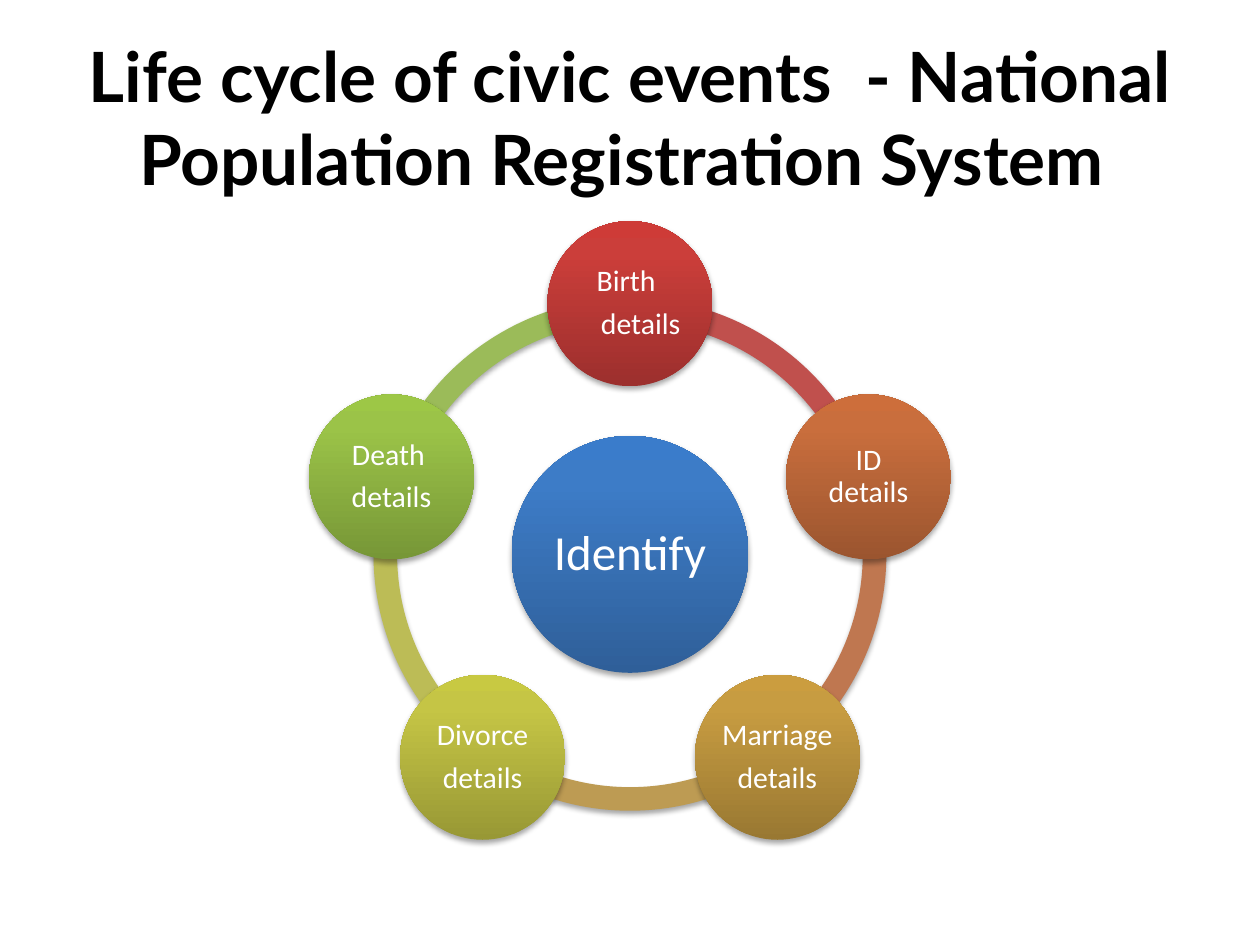
from copy import deepcopy
from dataclasses import dataclass
from math import cos, radians, sin

from lxml import etree
from pptx import Presentation
from pptx.dml.color import RGBColor
from pptx.enum.shapes import MSO_SHAPE
from pptx.enum.text import MSO_ANCHOR, PP_ALIGN
from pptx.oxml.ns import qn
from pptx.util import Inches, Pt

ARC, OVAL = MSO_SHAPE.BLOCK_ARC, MSO_SHAPE.OVAL
MIDDLE, CENTER = MSO_ANCHOR.MIDDLE, PP_ALIGN.CENTER
MID_X, MID_Y = 5, 4.4
RING, ORBIT = 4.07, 1.99
STEP = 72
STOPS = (0, 0.8, 1)


@dataclass
class Line:
    text: str
    left: float = 0
    right: float = 0


@dataclass
class Disc:
    lines: list[Line]
    shades: tuple[str, str, str]
    arc: str = ""
    size: float = 1.31
    font: float = 17
    inset: float = 0.02


HUB = Disc([Line("Identify")], ("2F5F99", "3D7CC7", "3A7CCB"),
           size=1.88, font=28, inset=0.04)

# Clockwise from the top; each arc leads to the next event
EVENTS = [
    Disc([Line("Birth", right=0.06), Line("details", left=0.17)],
         ("9C2F2D", "CB3E3A", "CE3B37"), "C0504D"),
    Disc([Line("ID details")], ("9B552F", "C96E3D", "CD6E3B"), "BF7750"),
    Disc([Line("Marriage"), Line("details")],
         ("997832", "C79C41", "CB9D3F"), "BD9B53"),
    Disc([Line("Divorce"), Line("details")],
         ("989835", "C5C545", "C8C942"), "BCBC56"),
    Disc([Line("Death", right=0.05), Line("details")],
         ("779737", "9BC348", "9DC746"), "9BBB59"),
]


def color(code: str) -> RGBColor:
    return RGBColor.from_string(code)


def add_round(slide, kind, x: float, y: float, size: float):
    """Add a borderless shape centred on x, y, with a soft shadow."""
    shape = slide.shapes.add_shape(kind, Inches(x - size / 2),
                                   Inches(y - size / 2),
                                   Inches(size), Inches(size))
    shape.line.fill.background()
    shape.shadow.inherit = False
    effects = shape._element.spPr.find(qn("a:effectLst"))
    shadow = etree.SubElement(effects, qn("a:outerShdw"), blurRad="40000",
                              dist="23000", dir="5400000", rotWithShape="0")
    tone = etree.SubElement(shadow, qn("a:srgbClr"), val="000000")
    etree.SubElement(tone, qn("a:alpha"), val="35000")
    return shape


def add_arc(slide, start: float, code: str) -> None:
    arc = add_round(slide, ARC, MID_X, MID_Y, RING)
    arc.fill.solid()
    arc.fill.fore_color.rgb = color(code)
    # Angles are stored in 60000ths of a degree, scaled down by 100000
    arc.adjustments[0] = start % 360 * 0.6
    arc.adjustments[1] = (start + STEP) % 360 * 0.6
    arc.adjustments[2] = 0.046


def add_run(para, text: str, font: str, size: float, code: str):
    run = para.add_run()
    run.text = text
    run.font.name = font
    run.font.size = Pt(size)
    run.font.color.rgb = color(code)
    return run


def shade(shape, codes: tuple[str, str, str]) -> None:
    shape.fill.gradient()
    shape.fill.gradient_angle = 90
    stops = shape._element.spPr.find(".//" + qn("a:gsLst"))
    stops.append(deepcopy(stops[-1]))
    for stop, place, code in zip(shape.fill.gradient_stops, STOPS, codes):
        stop.position = place
        stop.color.rgb = color(code)


def add_disc(slide, disc: Disc, x: float, y: float) -> None:
    shape = add_round(slide, OVAL, x, y, disc.size)
    shade(shape, disc.shades)
    frame = shape.text_frame
    frame.word_wrap = True
    frame.vertical_anchor = MIDDLE
    frame.margin_left = frame.margin_right = Inches(disc.inset)
    frame.margin_top = frame.margin_bottom = Inches(disc.inset)
    for i, line in enumerate(disc.lines):
        para = frame.add_paragraph() if i else frame.paragraphs[0]
        para.alignment = CENTER
        para.line_spacing = 0.9
        props = para._p.get_or_add_pPr()
        props.set("marL", str(Inches(line.left)))
        props.set("marR", str(Inches(line.right)))
        after = etree.SubElement(props, qn("a:spcAft"))
        etree.SubElement(after, qn("a:spcPct"), val="35000")
        add_run(para, line.text, "Calibri", disc.font, "FFFFFF")


def add_title(slide, text: str) -> None:
    box = slide.shapes.add_textbox(Inches(0.5), Inches(0.3),
                                   Inches(9), Inches(1.25))
    frame = box.text_frame
    frame.word_wrap = True
    frame.vertical_anchor = MIDDLE
    para = frame.paragraphs[0]
    para.alignment = CENTER
    add_run(para, text, "Lato", 39.6, "000000").font.bold = True


def main() -> None:
    deck = Presentation()
    deck.slide_width, deck.slide_height = Inches(10), Inches(7.5)
    slide = deck.slides.add_slide(deck.slide_layouts[6])

    add_title(slide, "Life cycle of civic events  - National "
                     "Population Registration System ")

    # Ring, then the hub and the events on top of it
    angles = [270 + STEP * i for i in range(len(EVENTS))]
    for angle, event in reversed(list(zip(angles, EVENTS))):
        add_arc(slide, angle, event.arc)
    add_disc(slide, HUB, MID_X, MID_Y)
    for angle, event in zip(angles, EVENTS):
        turn = radians(angle)
        add_disc(slide, event, MID_X + ORBIT * cos(turn),
                 MID_Y + ORBIT * sin(turn))

    deck.save("out.pptx")


if __name__ == "__main__":
    main()
